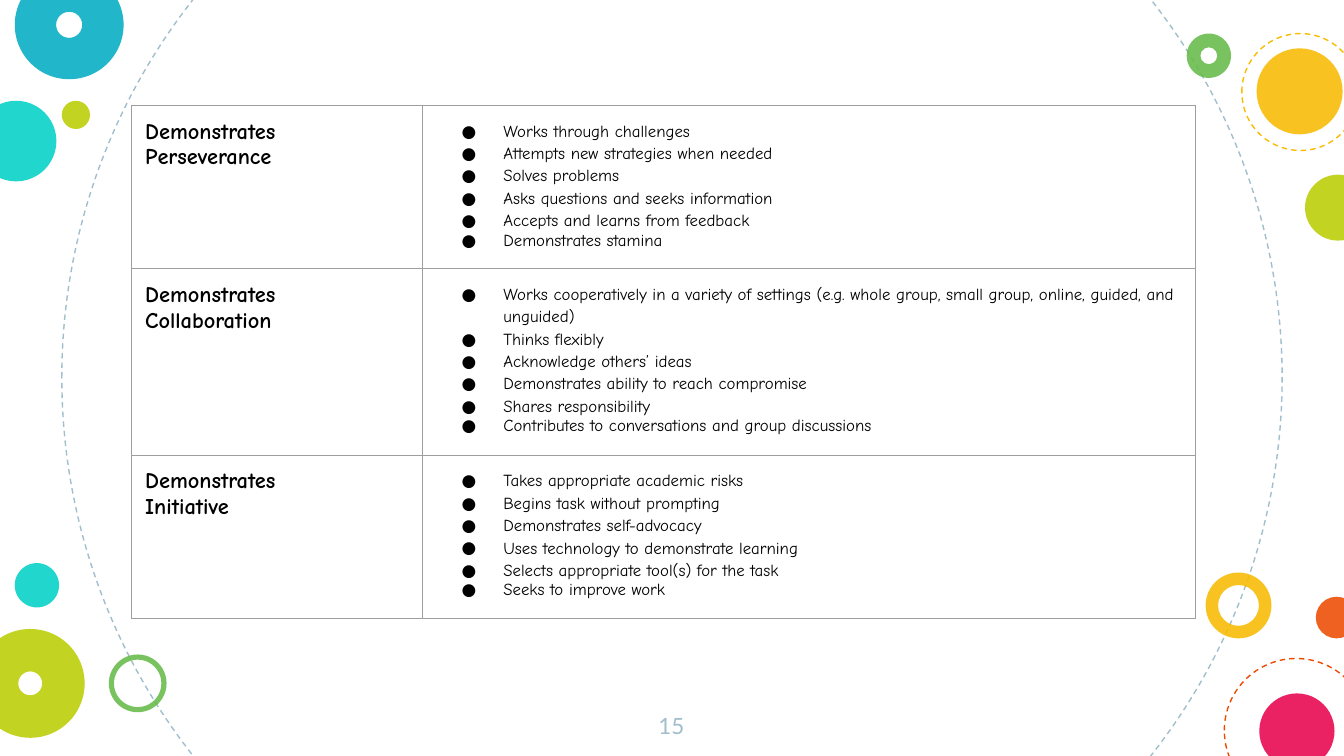
from dataclasses import dataclass

import pptx
import pptx.dml.color
import pptx.enum.dml
import pptx.enum.shapes
import pptx.enum.text
import pptx.oxml
import pptx.oxml.ns
import pptx.util
from lxml import etree

SLIDE_WIDTH = pptx.util.Inches(10)
SLIDE_HEIGHT = SLIDE_WIDTH * 9 // 16
FONT = "Comic Neue"
OPACITY = 87
COLORS = {
    "black": "000000", "mist": "A1BECC", "grid": "9E9E9E", "aqua": "00D1C6",
    "amber": "F8BB00", "teal": "00ACC3", "lime": "BBCD00", "orange": "ED4A00",
    "green": "65BB48", "pink": "E8004C",
}


@dataclass(frozen=True)
class Circle:
    """Left, top and size are percentages of the slide width."""
    left: float
    top: float
    size: float
    color: str
    ring: float = 0
    dashed: bool = False


@dataclass(frozen=True)
class Trait:
    label: tuple[str, ...]
    behaviors: tuple[str, ...]
    height: float


CIRCLES = [
    Circle(4.6, -17.3, 90.8, "mist", dashed=True),
    Circle(-1.8, 7.5, 6, "aqua"),
    Circle(89.7, 42.6, 4.9, "amber", ring=0.19),
    Circle(1.1, -2.2, 8.1, "teal", ring=0.38),
    Circle(4.6, 7.5, 2.1, "lime"),
    Circle(91.1, 49, 10.7, "orange", dashed=True),
    Circle(8.1, 48.7, 4.3, "green", ring=0.09),
    Circle(97.9, 44.4, 3.1, "orange"),
    Circle(-1.8, 46.8, 8.1, "lime", ring=0.39),
    Circle(93.7, 51.6, 5.6, "pink"),
    Circle(88.3, 2.5, 3.3, "green", ring=0.31),
    Circle(93.5, 3.6, 6.4, "amber"),
    Circle(97.1, 13, 4.9, "lime"),
    Circle(92.4, 2.5, 8.7, "amber", dashed=True),
    Circle(1.1, 41.9, 3.3, "aqua"),
]

COLUMN_WIDTHS = (21.65, 57.5)
TRAITS = [
    Trait(("Demonstrates Perseverance",), (
        "Works through challenges",
        "Attempts new strategies when needed",
        "Solves problems",
        "Asks questions and seeks information",
        "Accepts and learns from feedback",
        "Demonstrates stamina",
    ), 11.75),
    Trait(("Demonstrates Collaboration",), (
        "Works cooperatively in a variety of settings "
        "(e.g. whole group, small group, online, guided, and unguided)",
        "Thinks flexibly",
        "Acknowledge others’ ideas",
        "Demonstrates ability to reach compromise",
        "Shares responsibility",
        "Contributes to conversations and group discussions",
    ), 13.45),
    Trait(("Demonstrates", "Initiative"), (
        "Takes appropriate academic risks",
        "Begins task without prompting",
        "Demonstrates self-advocacy",
        "Uses technology to demonstrate learning",
        "Selects appropriate tool(s) for the task",
        "Seeks to improve work",
    ), 11.75),
]


def share(percent: float) -> int:
    """Length as a percentage of the slide width."""
    return round(SLIDE_WIDTH * percent / 100)


def rgb(name: str) -> pptx.dml.color.RGBColor:
    return pptx.dml.color.RGBColor.from_string(COLORS[name])


def add_child(parent, tag: str, **attributes: str):
    return etree.SubElement(parent, pptx.oxml.ns.qn(tag), attributes)


def draw_circle(page, circle: Circle) -> None:
    kinds = pptx.enum.shapes.MSO_SHAPE
    shape = page.shapes.add_shape(
        kinds.DONUT if circle.ring else kinds.OVAL,
        share(circle.left), share(circle.top), share(circle.size), share(circle.size))
    shape.shadow.inherit = False
    if circle.ring:
        shape.adjustments[0] = circle.ring
    if circle.dashed:
        shape.fill.background()
        shape.line.color.rgb = rgb(circle.color)
        shape.line.width = pptx.util.Pt(0.75)
        shape.line.dash_style = pptx.enum.dml.MSO_LINE.DASH
    else:
        shape.fill.solid()
        shape.fill.fore_color.rgb = rgb(circle.color)
        color = shape.fill._xPr.find(".//" + pptx.oxml.ns.qn("a:srgbClr"))
        add_child(color, "a:alpha", val=str(OPACITY * 1000))
        shape.line.fill.background()


def style_paragraph(paragraph, size: float, color: str, name: str = FONT, bold: bool = False) -> None:
    """Set the font of the text and the size of the paragraph mark, which scales bullets."""
    font = paragraph.font
    font.size = pptx.util.Pt(size)
    font.name = name
    font.bold = bold
    font.color.rgb = rgb(color)
    add_child(paragraph._p, "a:endParaRPr", sz=str(round(size * 100)))


def add_bullet(paragraph) -> None:
    properties = paragraph._p.get_or_add_pPr()
    properties.set("marL", str(share(5)))
    properties.set("indent", str(share(-3.1)))
    bullet_color = add_child(properties, "a:buClr")
    add_child(bullet_color, "a:srgbClr", val=COLORS["black"])
    add_child(properties, "a:buFont", typeface=FONT)
    add_child(properties, "a:buChar", char="●")


def style_cell(cell) -> None:
    """Clear the fill, draw all four borders and set equal margins."""
    cell.margin_left = cell.margin_right = share(1)
    cell.margin_top = cell.margin_bottom = share(1)
    properties = cell._tc.get_or_add_tcPr()
    for side in ("a:lnL", "a:lnR", "a:lnT", "a:lnB"):
        border = add_child(properties, side, w=str(pptx.util.Pt(0.75)))
        fill = add_child(border, "a:solidFill")
        add_child(fill, "a:srgbClr", val=COLORS["grid"])
    cell.fill.background()


def fill_cell(cell, lines: tuple[str, ...], size: float, bulleted: bool) -> None:
    style_cell(cell)
    frame = cell.text_frame
    for index, line in enumerate(lines):
        paragraph = frame.paragraphs[0] if index == 0 else frame.add_paragraph()
        paragraph.add_run().text = line
        if bulleted:
            paragraph.line_spacing = 1.15 if index < len(lines) - 1 else 1.0
            add_bullet(paragraph)
        style_paragraph(paragraph, size, "black", bold=not bulleted)


def draw_traits(page) -> None:
    frame = page.shapes.add_table(
        len(TRAITS), len(COLUMN_WIDTHS), share(9.8), share(7.85),
        share(sum(COLUMN_WIDTHS)), share(sum(trait.height for trait in TRAITS)))
    table = frame.table
    table.first_row = table.horz_banding = False
    for column, width in zip(table.columns, COLUMN_WIDTHS):
        column.width = share(width)
    for index, trait in enumerate(TRAITS):
        table.rows[index].height = share(trait.height)
        label = table.cell(index, 0)
        fill_cell(label, trait.label, 12, bulleted=False)
        label.margin_right = share(3)
        fill_cell(table.cell(index, 1), trait.behaviors, 9, bulleted=True)


def draw_page_number(page, number: str) -> None:
    box = page.shapes.add_textbox(share(47.4), share(52), share(5.1), share(4.3))
    frame = box.text_frame
    frame.word_wrap = True
    frame.margin_left = frame.margin_right = share(1)
    frame.margin_top = frame.margin_bottom = share(1)
    paragraph = frame.paragraphs[0]
    paragraph.add_run().text = number
    paragraph.alignment = pptx.enum.text.PP_ALIGN.CENTER
    style_paragraph(paragraph, 12, "mist", name="Lato")


def main() -> None:
    deck = pptx.Presentation()
    deck.slide_width, deck.slide_height = SLIDE_WIDTH, SLIDE_HEIGHT
    page = deck.slides.add_slide(deck.slide_layouts[6])
    for circle in CIRCLES:
        draw_circle(page, circle)
    draw_page_number(page, "15")
    draw_traits(page)
    deck.save("out.pptx")


if __name__ == "__main__":
    main()
